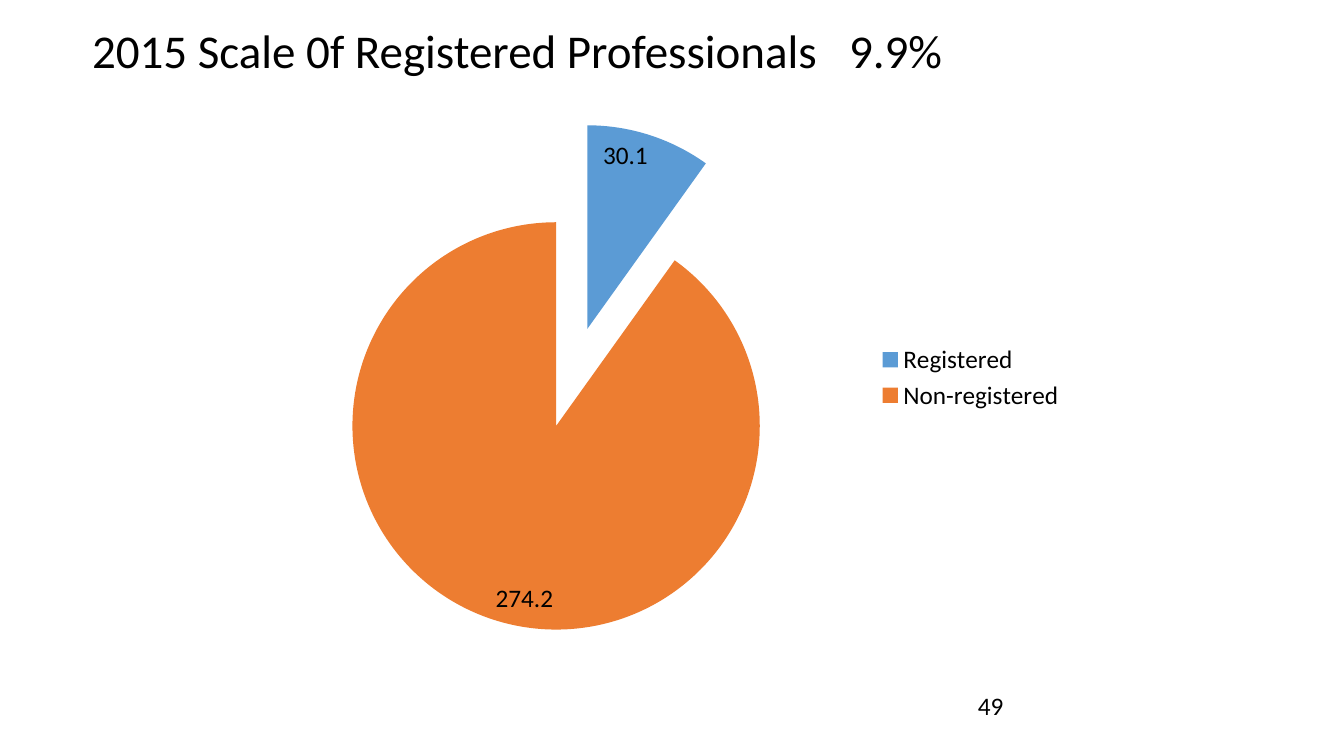
from lxml import etree
from pptx import Presentation
from pptx import util as u
from pptx.chart.data import CategoryChartData
from pptx.dml.color import RGBColor
from pptx.enum import chart as charts, text
from pptx.oxml.ns import qn

TITLE = "2015 Scale 0f Registered Professionals\t9.9%"
PAGE_NUMBER = "49"
PROFESSIONALS = [("Registered", 30.1, "blue"), ("Non-registered", 274.2, "orange")]
COLORS = {"blue": "5B9BD5", "orange": "ED7D31", "text": "000000"}
FONT = "Calibri"
EXPLOSION = 25  # percent of the radius

PX = 914400 / 100.8
SLIDE_SIZE = (1344, 756)
TITLE_BOX = (82, 16, 1204, 91)
PERCENT_TAB = 757
CHART_BOX = (269, 109, 806, 537)
NUMBER_BOX = (968, 685, 313, 52)


def px(*lengths):
    return [u.Emu(round(length * PX)) for length in lengths]


def color(name):
    return RGBColor.from_string(COLORS[name])


def style(font, size):
    font.name, font.size, font.bold = FONT, u.Pt(size), False
    font.color.rgb = color("text")


def format_frame(frame, size):
    frame.word_wrap = True
    frame.auto_size = text.MSO_AUTO_SIZE.NONE
    frame.vertical_anchor = text.MSO_ANCHOR.TOP
    paragraph = frame.paragraphs[0]
    paragraph.alignment = text.PP_ALIGN.LEFT
    paragraph.line_spacing = 1.0
    for run in paragraph.runs:
        style(run.font, size)


def add_tab_stop(paragraph, position):
    tabs = etree.SubElement(paragraph._p.get_or_add_pPr(), qn("a:tabLst"))
    etree.SubElement(tabs, qn("a:tab"), pos=str(px(position)[0]), algn="l")


def explode(point):
    """Move a pie slice away from the centre."""
    properties = point.format.fill._xPr
    explosion = etree.Element(qn("c:explosion"), val=str(EXPLOSION))
    properties.addprevious(explosion)


def add_pie(slide):
    names, values, fills = zip(*PROFESSIONALS)
    data = CategoryChartData()
    data.categories = names
    data.add_series("Series 1", values)
    chart = slide.shapes.add_chart(charts.XL_CHART_TYPE.PIE, *px(*CHART_BOX), data).chart
    style(chart.font, 18)
    chart.has_title = False
    chart.has_legend = True
    chart.legend.position = charts.XL_LEGEND_POSITION.RIGHT
    chart.legend.include_in_layout = False

    plot = chart.plots[0]
    plot.vary_by_categories = True
    plot.has_data_labels = True
    plot.data_labels.show_value = True
    plot.data_labels.show_percentage = False
    plot.data_labels.position = charts.XL_LABEL_POSITION.INSIDE_END
    style(plot.data_labels.font, 18)
    for index, fill in enumerate(fills):
        point = plot.series[0].points[index]
        point.format.fill.solid()
        point.format.fill.fore_color.rgb = color(fill)
        explode(point)


def main():
    presentation = Presentation()
    presentation.slide_width, presentation.slide_height = px(*SLIDE_SIZE)
    slide = presentation.slides.add_slide(presentation.slide_layouts[5])

    title = slide.shapes.title
    title.left, title.top, title.width, title.height = px(*TITLE_BOX)
    title.text_frame.text = TITLE
    format_frame(title.text_frame, 33.6)
    add_tab_stop(title.text_frame.paragraphs[0], PERCENT_TAB)

    add_pie(slide)

    number = slide.shapes.add_textbox(*px(*NUMBER_BOX))
    number.text_frame.text = PAGE_NUMBER
    format_frame(number.text_frame, 18)

    presentation.save("out.pptx")


if __name__ == "__main__":
    main()
